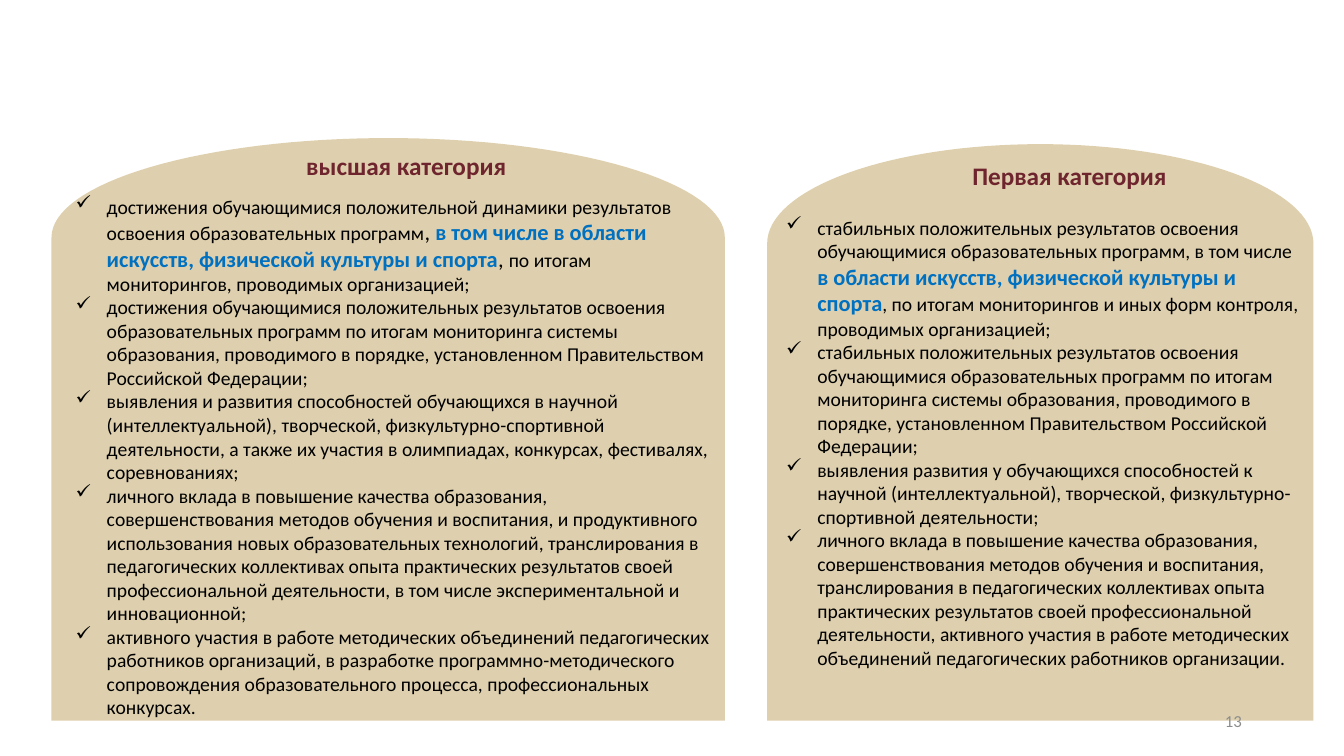
from math import cos, pi, sin

from lxml import etree
from pptx import Presentation
from pptx.dml.color import RGBColor
from pptx.enum.text import MSO_ANCHOR, MSO_AUTO_SIZE, PP_ALIGN
from pptx.oxml.ns import qn
from pptx.util import Inches, Pt

LEFT, CENTER, RIGHT = PP_ALIGN.LEFT, PP_ALIGN.CENTER, PP_ALIGN.RIGHT
TOP, MIDDLE = MSO_ANCHOR.TOP, MSO_ANCHOR.MIDDLE
GROW = MSO_AUTO_SIZE.SHAPE_TO_FIT_TEXT

COLORS = {
    "panel": "BFA25E",
    "heading": "6F252D",
    "body": "000000",
    "accent": "0070C0",
    "number": "8C8C8C",
}
BLANK_LAYOUT = 6
ARCH_STEPS = 64
PANEL_BOTTOM = 95.33
ARCH_RISE = 13.15

# Boxes are left, top, width, height in percent of the slide's size.
# A paragraph is a list of (text, size, colour name, bold) runs.
CATEGORIES = [
    {
        "panel": (3.83, 18.27, 50.1),
        "heading": "высшая категория",
        "heading_box": (21, 19.87, 18.45, 4),
        "criteria_box": (4.88, 25.07, 49.05, 71.33),
        "criteria": [
            [
                ("достижения обучающимися положительной динамики результатов "
                 "освоения образовательных программ", 14, "body", False),
                (", ", 16, "body", False),
                ("в том числе в области искусств, физической культуры и спорта",
                 16, "accent", True),
                (", ", 16, "body", False),
                ("по итогам мониторингов, проводимых организацией;",
                 14, "body", False),
            ],
            "достижения обучающимися положительных результатов освоения "
            "образовательных программ по итогам мониторинга системы образования, "
            "проводимого в порядке, установленном Правительством Российской "
            "Федерации;",
            "выявления и развития способностей обучающихся в научной "
            "(интеллектуальной), творческой, физкультурно-спортивной деятельности, "
            "а также их участия в олимпиадах, конкурсах, фестивалях, "
            "соревнованиях;",
            "личного вклада в повышение качества образования, совершенствования "
            "методов обучения и воспитания, и продуктивного использования новых "
            "образовательных технологий, транслирования в педагогических "
            "коллективах опыта практических результатов своей профессиональной "
            "деятельности, в том числе экспериментальной и инновационной;",
            "активного участия в работе методических объединений педагогических "
            "работников организаций, в разработке программно-методического "
            "сопровождения образовательного процесса, профессиональных конкурсах.",
        ],
    },
    {
        "panel": (57.08, 19.07, 40.65),
        "heading": "Первая категория",
        "heading_box": (71.93, 21.2, 15.3, 4),
        "criteria_box": (57.75, 27.87, 39.98, 61.87),
        "criteria": [
            [
                ("стабильных положительных результатов освоения обучающимися "
                 "образовательных программ, в том числе ", 14, "body", False),
                ("в области искусств, физической культуры и спорта",
                 16, "accent", True),
                (", по итогам мониторингов и иных форм контроля, проводимых "
                 "организацией;", 14, "body", False),
            ],
            "стабильных положительных результатов освоения обучающимися "
            "образовательных программ по итогам мониторинга системы образования, "
            "проводимого в порядке, установленном Правительством Российской "
            "Федерации;",
            "выявления развития у обучающихся способностей к научной "
            "(интеллектуальной), творческой, физкультурно-спортивной деятельности;",
            "личного вклада в повышение качества образования, совершенствования "
            "методов обучения и воспитания, транслирования в педагогических "
            "коллективах опыта практических результатов своей профессиональной "
            "деятельности, активного участия в работе методических объединений "
            "педагогических работников организации.",
        ],
    },
]


class SlideBuilder:
    font_name = "Calibri"

    def __init__(self, presentation):
        self.width = presentation.slide_width
        self.height = presentation.slide_height
        layout = presentation.slide_layouts[BLANK_LAYOUT]
        self.slide = presentation.slides.add_slide(layout)

    def x(self, share):
        return round(self.width * share / 100)

    def y(self, share):
        return round(self.height * share / 100)

    def style_font(self, font, size, color, bold):
        font.name = self.font_name
        font.size = Pt(size)
        font.bold = bold
        font.color.rgb = RGBColor.from_string(COLORS[color])

    def arch_panel(self, left, top, width):
        """Draw a half-transparent panel whose top edge is half an ellipse."""
        radius = width / 2
        angles = [pi * step / ARCH_STEPS for step in range(ARCH_STEPS + 1)]
        arch = [
            (self.x(left + radius * (1 - cos(angle))),
             self.y(top + ARCH_RISE * (1 - sin(angle))))
            for angle in angles
        ]
        bottom = self.y(PANEL_BOTTOM)
        builder = self.slide.shapes.build_freeform(self.x(left), bottom)
        builder.add_line_segments(arch + [(self.x(left + width), bottom)])
        shape = builder.convert_to_shape()
        shape.shadow.inherit = False
        shape.line.fill.background()
        shape.fill.solid()
        shape.fill.fore_color.rgb = RGBColor.from_string(COLORS["panel"])
        color = shape.fill._xPr.find(".//" + qn("a:srgbClr"))
        etree.SubElement(color, qn("a:alpha"), val="50000")

    def text_frame(self, box, anchor=TOP, grow=True, inset=True):
        left, top, width, height = box
        shape = self.slide.shapes.add_textbox(
            self.x(left), self.y(top), self.x(width), self.y(height))
        frame = shape.text_frame
        frame.word_wrap = True
        frame.vertical_anchor = anchor
        if grow:
            frame.auto_size = GROW
        if not inset:
            frame.margin_left = frame.margin_right = 0
            frame.margin_top = frame.margin_bottom = 0
        return frame

    def label(self, text, box, size, color, bold, alignment, **frame_options):
        paragraph = self.text_frame(box, **frame_options).paragraphs[0]
        paragraph.text = text
        paragraph.alignment = alignment
        self.style_font(paragraph.font, size, color, bold)

    def check_list(self, items, box):
        frame = self.text_frame(box)
        for index, item in enumerate(items):
            paragraph = frame.add_paragraph() if index else frame.paragraphs[0]
            paragraph.alignment = LEFT
            self.add_check_mark(paragraph)
            if isinstance(item, str):
                paragraph.text = item
                self.style_font(paragraph.font, 14, "body", False)
                continue
            for text, *style in item:
                run = paragraph.add_run()
                run.text = text
                self.style_font(run.font, *style)

    def add_check_mark(self, paragraph):
        indent = Inches(0.31)
        properties = paragraph._p.get_or_add_pPr()
        properties.set("marL", str(indent))
        properties.set("indent", str(-indent))
        etree.SubElement(properties, qn("a:buChar"), char="✓")


def main():
    presentation = Presentation()
    presentation.slide_width = Inches(13.33)
    presentation.slide_height = Inches(7.5)
    builder = SlideBuilder(presentation)
    for category in CATEGORIES:
        builder.arch_panel(*category["panel"])
    builder.label("13", (70.65, 92.67, 22.5, 5.33), 12, "number", False, RIGHT,
                  anchor=MIDDLE, grow=False)
    for category in CATEGORIES:
        builder.label(category["heading"], category["heading_box"], 18, "heading",
                      True, CENTER, inset=False)
        builder.check_list(category["criteria"], category["criteria_box"])
    presentation.save("out.pptx")


if __name__ == "__main__":
    main()
